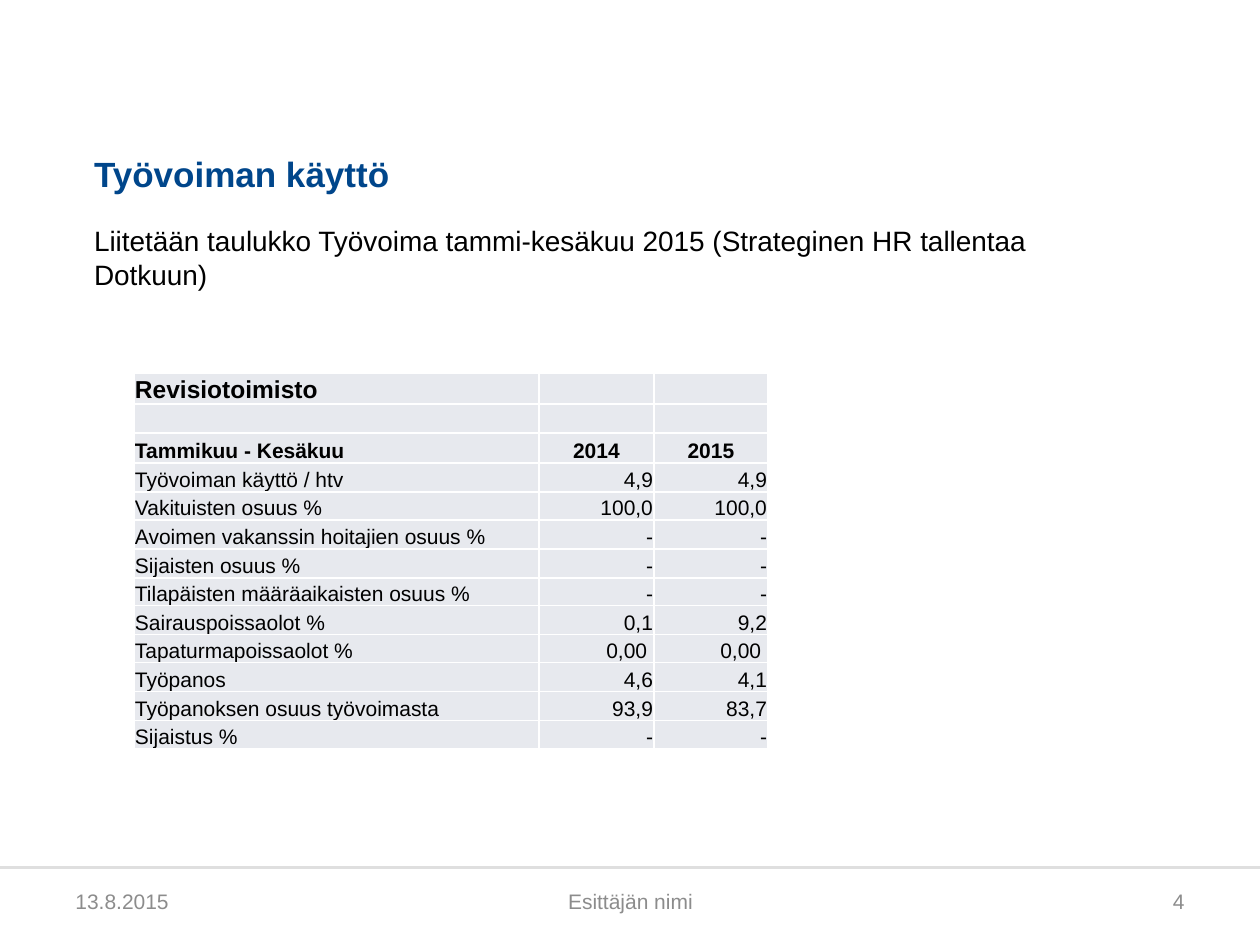
"""Build the workforce slide with its half-year comparison table."""
from lxml import etree
from pptx import Presentation
from pptx.dml.color import RGBColor
from pptx.enum.shapes import MSO_CONNECTOR, MSO_SHAPE
from pptx.enum.text import MSO_ANCHOR, PP_ALIGN
from pptx.oxml.ns import qn
from pptx.util import Pt

PX = 914400 // 126
LEFT, CENTER, RIGHT = PP_ALIGN.LEFT, PP_ALIGN.CENTER, PP_ALIGN.RIGHT
TOP, MIDDLE, BOTTOM = MSO_ANCHOR.TOP, MSO_ANCHOR.MIDDLE, MSO_ANCHOR.BOTTOM
RECTANGLE, STRAIGHT = MSO_SHAPE.RECTANGLE, MSO_CONNECTOR.STRAIGHT
COLORS = {"white": "FFFFFF", "rule": "DFDFDF", "footer": "8C8C8C",
          "title": "00468B", "text": "000000", "cell": "E7E9EE"}


def color(name):
    return RGBColor.from_string(COLORS[name])


def write(frame, text, size, ink, align=LEFT, bold=False, anchor=TOP):
    frame.word_wrap = True
    frame.vertical_anchor = anchor
    paragraph = frame.paragraphs[0]
    paragraph.text = text
    paragraph.alignment = align
    font = paragraph.font
    font.name, font.size, font.bold = "Arial", Pt(size), bold
    font.color.rgb = color(ink)


prs = Presentation()
prs.slide_width, prs.slide_height = 1260 * PX, 945 * PX
slide = prs.slides.add_slide(prs.slide_layouts[5])
shapes = slide.shapes

footer_band = shapes.add_shape(RECTANGLE, 0, 869 * PX, 1260 * PX, 76 * PX)
footer_band.shadow.inherit = False
footer_band.fill.solid()
footer_band.fill.fore_color.rgb = color("white")
footer_band.line.fill.background()

footer_rule = shapes.add_connector(STRAIGHT, 0, 868 * PX, 1260 * PX, 868 * PX)
footer_rule.line.color.rgb = color("rule")
footer_rule.line.width = Pt(1.75)
etree.SubElement(footer_rule._element.spPr, qn("a:effectLst"))

for left, width, text, align in [(63, 294, "13.8.2015", LEFT),
                                 (431, 399, "Esittäjän nimi", CENTER),
                                 (903, 294, "4", RIGHT)]:
    footer = shapes.add_textbox(left * PX, 876 * PX, width * PX, 50 * PX)
    write(footer.text_frame, text, 12, "footer", align, anchor=MIDDLE)

title = shapes.title
intro = shapes.add_textbox(94 * PX, 224 * PX, 992 * PX, 645 * PX)
title.left, title.top, title.width, title.height = 94 * PX, 86 * PX, 1071 * PX, 109 * PX
for frame in (title.text_frame, intro.text_frame):
    frame.margin_left = frame.margin_right = frame.margin_top = frame.margin_bottom = 0
write(title.text_frame, "Työvoiman käyttö", 20, "title", bold=True, anchor=BOTTOM)
write(intro.text_frame, "Liitetään taulukko Työvoima tammi-kesäkuu 2015 "
      "(Strateginen HR tallentaa Dotkuun)", 16, "text")

ROWS = [
    ("Revisiotoimisto", "", ""),
    ("", "", ""),
    ("Tammikuu - Kesäkuu", "2014", "2015"),
    ("Työvoiman käyttö / htv", "4,9", "4,9"),
    ("Vakituisten osuus %", "100,0", "100,0"),
    ("Avoimen vakanssin hoitajien osuus %", "-", "-"),
    ("Sijaisten osuus %", "-", "-"),
    ("Tilapäisten määräaikaisten osuus %", "-", "-"),
    ("Sairauspoissaolot %", "0,1", "9,2"),
    ("Tapaturmapoissaolot %", "0,00 ", "0,00 "),
    ("Työpanos", "4,6", "4,1"),
    ("Työpanoksen osuus työvoimasta", "93,9", "83,7"),
    ("Sijaistus %", "-", "-"),
]
HEADER_ROW = 2
COLUMN_WIDTHS = [405, 115, 114]
ROW_HEIGHTS = [31, 29, 30] + [29, 28, 29, 29, 28] * 2

workforce = shapes.add_table(len(ROWS), len(COLUMN_WIDTHS), 134 * PX, 373 * PX,
                             sum(COLUMN_WIDTHS) * PX, sum(ROW_HEIGHTS) * PX).table
workforce.first_row = workforce.horz_banding = False
for column, width in zip(workforce.columns, COLUMN_WIDTHS):
    column.width = width * PX
for row, height in zip(workforce.rows, ROW_HEIGHTS):
    row.height = height * PX

for r, values in enumerate(ROWS):
    for c, value in enumerate(values):
        cell = workforce.cell(r, c)
        cell.margin_left = cell.margin_right = cell.margin_top = PX
        cell.margin_bottom = 0
        align = LEFT if c == 0 else CENTER if r == HEADER_ROW else RIGHT
        write(cell.text_frame, value, 14 if r == 0 else 12, "text", align,
              bold=r <= HEADER_ROW)
        cell.vertical_anchor = BOTTOM
        if not value:
            etree.SubElement(cell.text_frame.paragraphs[0]._p, qn("a:endParaRPr"), sz="1200")
        properties = cell._tc.get_or_add_tcPr()
        for side in ("a:lnL", "a:lnR", "a:lnT", "a:lnB"):
            border = etree.SubElement(properties, qn(side), w=str(Pt(1)))
            paint = etree.SubElement(border, qn("a:solidFill"))
            etree.SubElement(paint, qn("a:srgbClr"), val=COLORS["white"])
        cell.fill.solid()
        cell.fill.fore_color.rgb = color("cell")

prs.save("out.pptx")
